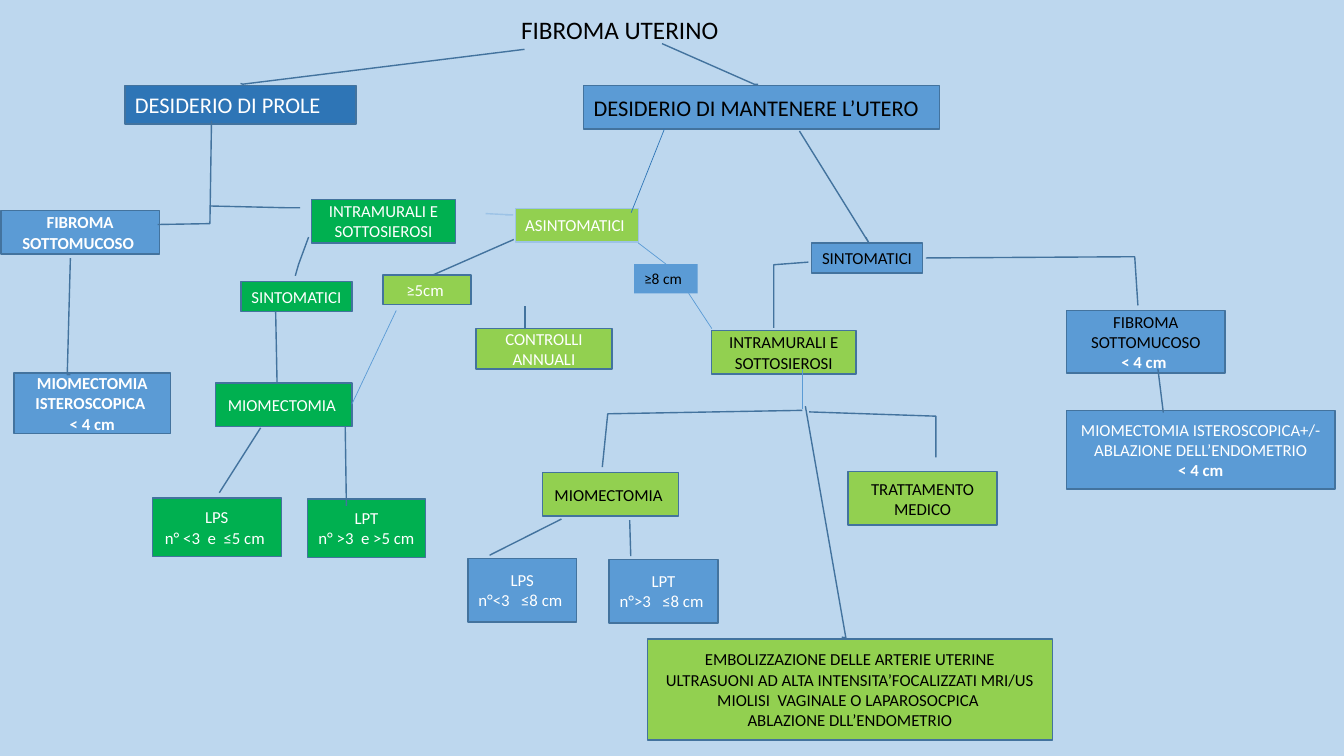
from lxml.etree import SubElement
from pptx import Presentation
from pptx.dml.color import RGBColor as RGB
from pptx.enum.shapes import MSO_CONNECTOR as LINK, MSO_SHAPE as SHAPE
from pptx.enum.text import MSO_ANCHOR as ANCHOR, PP_ALIGN as ALIGN
from pptx.oxml.ns import qn
from pptx.util import Inches, Pt

BACK = RGB(0xBD, 0xD7, 0xEE)
NAVY = RGB(0x2E, 0x75, 0xB6)
BLUE = RGB(0x5B, 0x9B, 0xD5)
PALE = RGB(0x9D, 0xC3, 0xE6)
EDGE = RGB(0x43, 0x73, 0x9E)
GREEN = RGB(0x00, 0xB0, 0x50)
LIME = RGB(0x92, 0xD0, 0x50)
WHITE = RGB(0xFF, 0xFF, 0xFF)
BLACK = RGB(0x00, 0x00, 0x00)

TITLE = "FIBROMA UTERINO", (5.07, 0.09, 2.24, 0.4)
SIZE_TAG = "≥8 cm", (6.29, 2.62, 0.63, 0.29)

# Lines of text, (left, top, width, height), fill, font colour,
# leader points as (y, x) pairs in shares of the box, further format
BOXES = [
    (["DESIDERIO DI PROLE"], (1.24, 0.85, 2.29, 0.38), NAVY, WHITE,
     (-0.06, 0.5, -0.04, 0.51, -0.95, 1.73), dict(size=16, align=ALIGN.LEFT)),
    (["DESIDERIO DI MANTENERE L’UTERO"], (5.79, 0.85, 3.53, 0.43), BLUE, BLACK,
     (-0.03, 0.49, -0.03, 0.48, -0.97, 0.22), dict(size=16, align=ALIGN.LEFT)),
    (["FIBROMA SOTTOMUCOSO "], (0.01, 2.09, 1.57, 0.43), BLUE, WHITE,
     (0.32, 0.99, 0.3, 1.32, -2.07, 1.33), dict(bold=True)),
    (["MIOMECTOMIA ISTEROSCOPICA ", "< 4 cm"], (0.14, 3.7, 1.55, 0.6), BLUE, WHITE,
     (0.03, 0.36, 0.03, 0.34, -1.9, 0.36), dict(bold=True)),
    (["INTRAMURALI E SOTTOSIEROSI"], (3.09, 1.98, 1.43, 0.43), GREEN, WHITE,
     (0.19, -0.08, 0.19, -0.17, 0.15, -0.7), {}),
    (["SINTOMATICI"], (2.39, 2.79, 1.1, 0.3), GREEN, WHITE,
     (-0.18, 0.49, -0.56, 0.52, -1.46, 0.61), {}),
    (["MIOMECTOMIA "], (2.14, 3.8, 1.35, 0.43), GREEN, WHITE,
     (-0.05, 0.45, -0.03, 0.45, -1.66, 0.44), {}),
    (["ASINTOMATICI"], (5.11, 2.07, 1.22, 0.33), LIME, WHITE,
     (0.19, -0.08, 0.19, -0.02, 0.15, -0.24), dict(edge=PALE, align=ALIGN.LEFT)),
    (["CONTROLLI ANNUALI"], (4.72, 3.26, 1.35, 0.4), LIME, WHITE,
     (-0.06, 0.36, 0, 0.36, -0.57, 0.36), {}),
    (["SINTOMATICI"], (8.05, 2.41, 1.1, 0.3), BLUE, BLACK,
     (-0.18, 0.49, 0.02, 0.52, -3.7, -0.11), {}),
    (["FIBROMA SOTTOMUCOSO", "< 4 cm "], (10.58, 3.08, 1.57, 0.62), BLUE, BLACK,
     (-0.08, 0.45, -0.86, 0.43, -0.84, -0.89), {}),
    (["MIOMECTOMIA ISTEROSCOPICA+/-ABLAZIONE DELL’ENDOMETRIO", "< 4 cm"],
     (10.58, 4.07, 2.66, 0.78), BLUE, WHITE,
     (0.03, 0.36, 0.02, 0.36, -0.53, 0.34), {}),
    (["INTRAMURALI E SOTTOSIEROSI"], (7.06, 3.28, 1.43, 0.43), LIME, BLACK,
     (-0.06, 0.43, -1.52, 0.43, -1.58, 0.67), {}),
    (["TRATTAMENTO MEDICO"], (8.41, 4.68, 1.48, 0.53), LIME, BLACK,
     (-0.27, 0.59, -1.04, 0.59, -1.12, -0.26), {}),
    (["MIOMECTOMIA "], (5.38, 4.69, 1.35, 0.43), LIME, BLACK,
     (-0.13, 0.44, -1.36, 0.48, -1.44, 1.91), {}),
    (["EMBOLIZZAZIONE DELLE ARTERIE UTERINE",
      "ULTRASUONI AD ALTA INTENSITA’FOCALIZZATI MRI/US",
      "MIOLISI  VAGINALE O LAPAROSOCPICA ", "ABLAZIONE DLL’ENDOMETRIO"],
     (6.42, 6.34, 4.02, 1), LIME, BLACK,
     (-0.02, 0.48, -0.01, 0.49, -2.31, 0.39), {}),
    (["LPS", "n° <3  e  ≤5 cm "], (1.51, 4.94, 1.28, 0.58), GREEN, WHITE,
     (-0.09, 0.52, -1.2, 0.84), {}),
    (["LPT", "n° >3  e >5 cm "], (3.05, 4.95, 1.17, 0.58), GREEN, WHITE,
     (0.12, 0.33, -1.24, 0.32), {}),
    (["LPS", "n°<3   ≤8 cm "], (4.64, 5.54, 1.08, 0.63), BLUE, WHITE,
     (-0.05, 0.2, -0.62, 0.86), {}),
    (["LPT", "n°>3   ≤8 cm "], (6.04, 5.55, 1.08, 0.63), BLUE, WHITE,
     (-0.05, 0.2, -0.62, 0.19), {}),
    (["≥5cm "], (3.8, 2.73, 0.87, 0.29), LIME, WHITE,
     (-0.01, 0.57, -1.22, 1.49), {}),
]

LINES = [
    ((6.59, 1.28), (6.26, 2.11), NAVY),
    ((7.96, 3.66), (7.96, 4.06), BLUE),
    ((3.93, 3.08), (3.49, 4.01), BLUE),
    ((6.83, 2.91), (7.06, 3.26), BLUE),
]
TAG_LINE = (6.33, 2.41), (6.61, 2.62), BLUE


def write(shape, lines, size=12, color=BLACK, bold=False,
          align=ALIGN.LEFT, anchor=ANCHOR.TOP):
    """Fill a shape with paragraphs; size limits stand out in bold white."""
    frame = shape.text_frame
    frame.word_wrap = True
    frame.vertical_anchor = anchor
    for i, line in enumerate(lines):
        para = frame.add_paragraph() if i else frame.paragraphs[0]
        para.alignment = align
        run = para.add_run()
        run.text = line
        limit = line.startswith("<")
        font = run.font
        font.name, font.size = "Calibri", Pt(size)
        font.bold = bold or limit
        font.color.rgb = WHITE if limit else color


def add_box(shapes, kind, area, fill, edge=None):
    box = shapes.add_shape(kind, *map(Inches, area))
    box.shadow.inherit = False
    box.fill.solid()
    box.fill.fore_color.rgb = fill
    if edge is None:
        box.line.fill.background()
    else:
        box.line.color.rgb = edge
        box.line.width = Pt(1)
    return box


def add_callout(shapes, lines, area, fill, color, leader,
                edge=EDGE, align=ALIGN.CENTER, **style):
    kind = SHAPE.LINE_CALLOUT_1 if len(leader) == 4 else SHAPE.LINE_CALLOUT_2
    box = add_box(shapes, kind, area, fill, edge)
    for i, share in enumerate(leader):
        box.adjustments[i] = share
    write(box, lines, color=color, align=align, anchor=ANCHOR.MIDDLE, **style)


def add_line(shapes, start, end, color):
    line = shapes.add_connector(LINK.STRAIGHT, *map(Inches, start + end))
    line.line.color.rgb = color
    line.line.width = Pt(0.5)
    SubElement(line._element.spPr, qn("a:effectLst"))
    return line


def main():
    deck = Presentation()
    deck.slide_width, deck.slide_height = Inches(13.33), Inches(7.5)
    slide = deck.slides.add_slide(deck.slide_layouts[6])
    slide.background.fill.solid()
    slide.background.fill.fore_color.rgb = BACK
    shapes = slide.shapes

    text, area = TITLE
    write(shapes.add_textbox(*map(Inches, area)), [text], size=18)
    for *parts, style in BOXES:
        add_callout(shapes, *parts, **style)
    for line in LINES:
        add_line(shapes, *line)

    text, area = SIZE_TAG
    tag = add_box(shapes, SHAPE.RECTANGLE, area, BLUE)
    write(tag, [text], size=11)
    add_line(shapes, *TAG_LINE).end_connect(tag, 0)
    deck.save("out.pptx")


if __name__ == "__main__":
    main()
